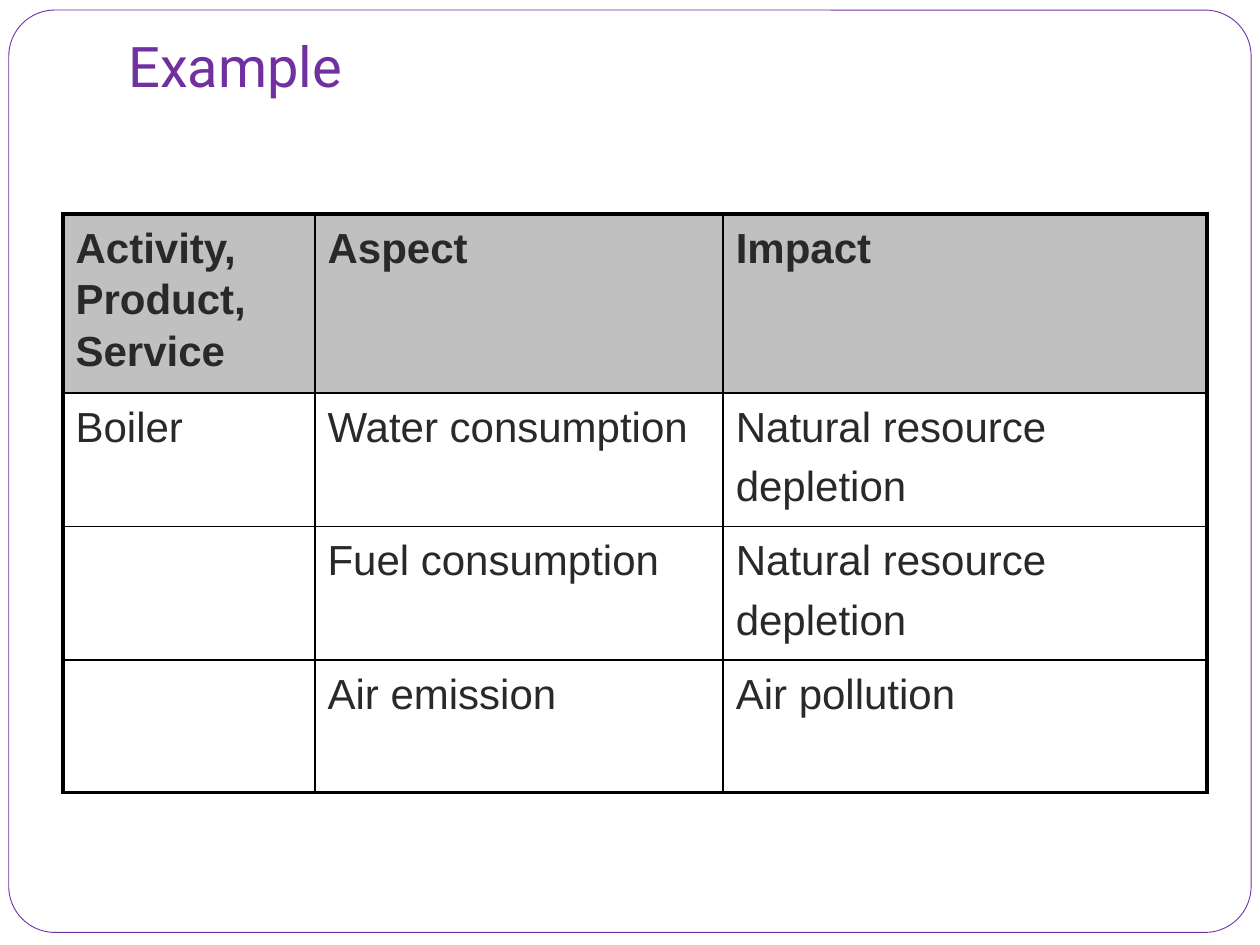
from lxml.etree import SubElement
from pptx import Presentation
from pptx.dml.color import RGBColor
from pptx.enum.shapes import MSO_SHAPE as Shape
from pptx.enum.text import MSO_ANCHOR as Anchor
from pptx.oxml.ns import qn
from pptx.util import Pt

EMU_PER_PX = 9144  # 100 px to the inch
COLORS = {"paper": "FFFFFF", "accent": "7030A0", "text": "292929",
          "header": "C0C0C0", "border": "000000"}
TITLE_FONT, TABLE_FONT = "Roboto", "Arial"
OUTER_LINE, INNER_LINE = 2.25, 1

COLUMN_WIDTHS = [200, 324, 384]
ROW_HEIGHTS = [142, 106, 106, 105]
ROWS = [
    ["Activity, Product, Service", "Aspect", "Impact"],
    ["Boiler", "Water consumption", "Natural resource\ndepletion"],
    ["", "Fuel consumption", "Natural resource\ndepletion"],
    ["", "Air emission", "Air pollution"],
]


def px(length):
    return length * EMU_PER_PX


def rgb(name):
    return RGBColor.from_string(COLORS[name])


class SlideBuilder:
    def __init__(self, slide):
        self.slide = slide

    def style(self, font, name, size, color, bold=False):
        font.name, font.size, font.bold = name, Pt(size), bold
        font.color.rgb = rgb(color)

    def frame(self, left, top, width, height):
        shape = self.slide.shapes.add_shape(
            Shape.ROUNDED_RECTANGLE, px(left), px(top), px(width), px(height))
        shape.adjustments[0] = 0.05
        shape.shadow.inherit = False
        shape.fill.solid()
        shape.fill.fore_color.rgb = rgb("paper")
        shape.line.color.rgb = rgb("accent")
        shape.line.width = Pt(0.5)

    def title(self, text, left, top, width, height):
        box = self.slide.shapes.add_textbox(px(left), px(top), px(width), px(height))
        box.text_frame.word_wrap = True
        box.text_frame.vertical_anchor = Anchor.TOP
        para = box.text_frame.paragraphs[0]
        para.text = text
        self.style(para.runs[0].font, TITLE_FONT, 32, "accent")

    def borders(self, cell, widths):
        """Draw the left, right, top and bottom lines, widths in points."""
        properties = cell._tc.get_or_add_tcPr()
        for side, width in zip("LRTB", widths):
            line = SubElement(properties, qn(f"a:ln{side}"), w=str(Pt(width)))
            fill = SubElement(line, qn("a:solidFill"))
            SubElement(fill, qn("a:srgbClr"), val=COLORS["border"])

    def cell(self, cell, text, header):
        if header:
            cell.fill.solid()
            cell.fill.fore_color.rgb = rgb("header")
        else:
            cell.fill.background()
        cell.text_frame.text = text
        for index, para in enumerate(cell.text_frame.paragraphs):
            para.line_spacing = 1.1
            if index:
                para.space_before = Pt(4.8)
            self.style(para.font, TABLE_FONT, 24, "text", header)
            for span in para.runs:
                self.style(span.font, TABLE_FONT, 24, "text", header)

    def table(self, rows, left, top, widths, heights):
        table = self.slide.shapes.add_table(
            len(heights), len(widths), px(left), px(top),
            px(sum(widths)), px(sum(heights))).table
        table.first_row = table.horz_banding = False
        for column, width in zip(table.columns, widths):
            column.width = px(width)
        for row, height in zip(table.rows, heights):
            row.height = px(height)
        last_row, last_column = len(heights) - 1, len(widths) - 1
        for r, texts in enumerate(rows):
            for c, text in enumerate(texts):
                on_edge = [c == 0, c == last_column, r == 0, r == last_row]
                cell = table.cell(r, c)
                self.borders(cell, [OUTER_LINE if edge else INNER_LINE for edge in on_edge])
                self.cell(cell, text, header=r == 0)


def main():
    deck = Presentation()
    deck.slide_width, deck.slide_height = px(1000), px(750)
    page = SlideBuilder(deck.slides.add_slide(deck.slide_layouts[6]))
    page.frame(7, 8, 986, 732)
    page.table(ROWS, 50, 170, COLUMN_WIDTHS, ROW_HEIGHTS)
    page.title("Example", 92, 20, 908, 108)
    deck.save("out.pptx")


if __name__ == "__main__":
    main()
